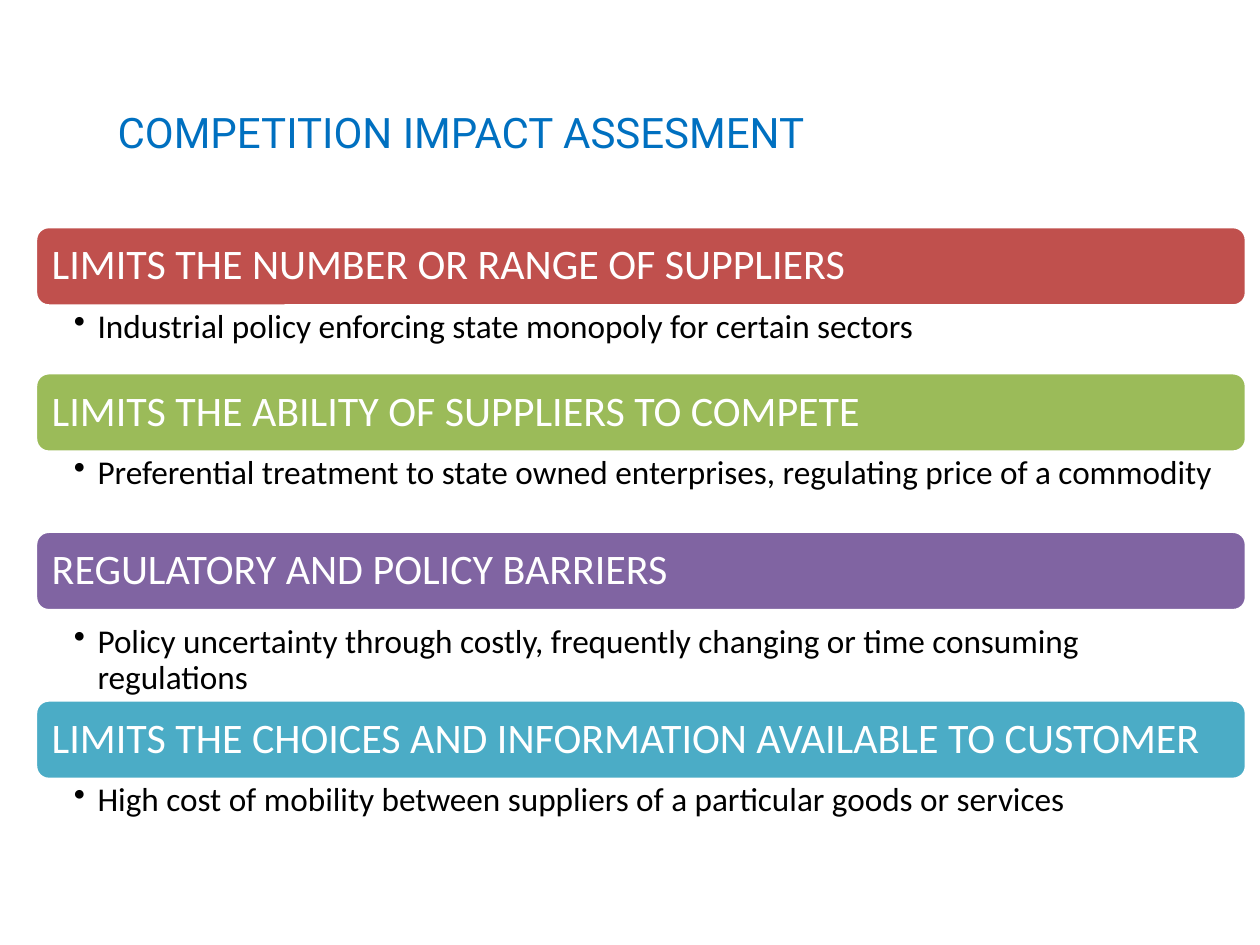
import pptx
import pptx.dml.color
import pptx.enum.shapes
import pptx.enum.text
import pptx.oxml.ns
import pptx.util
import lxml.etree

Pt = pptx.util.Pt
RGBColor = pptx.dml.color.RGBColor
ANCHOR = pptx.enum.text.MSO_ANCHOR
LEFT = pptx.enum.text.PP_ALIGN.LEFT

BLUE = RGBColor(0x00, 0x70, 0xC0)
RED = RGBColor(0xC0, 0x50, 0x4D)
GREEN = RGBColor(0x9B, 0xBB, 0x59)
PURPLE = RGBColor(0x80, 0x64, 0xA2)
TEAL = RGBColor(0x4B, 0xAC, 0xC6)
WHITE = RGBColor(0xFF, 0xFF, 0xFF)
BLACK = RGBColor(0x00, 0x00, 0x00)

BAR_LEFT, BAR_WIDTH, BAR_HEIGHT = 20.3, 692, 45.4

# Heading, colour, example, bar top, gap above the example, example height
BARRIERS = [
    ("LIMITS THE NUMBER OR RANGE OF SUPPLIERS", RED,
     "Industrial policy enforcing state monopoly for certain sectors",
     129.5, 0, 31),
    ("LIMITS THE ABILITY OF SUPPLIERS TO COMPETE", GREEN,
     "Preferential treatment to state owned enterprises, regulating price of a commodity",
     213, 0, 31),
    ("REGULATORY AND POLICY BARRIERS", PURPLE,
     "Policy uncertainty through costly, frequently changing or time consuming regulations",
     303.6, 6, 47),
    ("LIMITS THE CHOICES AND INFORMATION AVAILABLE TO CUSTOMER", TEAL,
     "High cost of mobility between suppliers of a particular goods or services",
     400, 0, 31),
]


class SlideBuilder:
    """Holds the text style and the current slide."""

    body_font, title_font = "Calibri", "Roboto"
    heading_size, example_size = 24, 19

    def __init__(self, slide):
        self.slide = slide

    def set_text(self, shape, text, font, size, color, anchor, insets):
        frame = shape.text_frame
        frame.word_wrap = True
        frame.auto_size = pptx.enum.text.MSO_AUTO_SIZE.NONE
        frame.vertical_anchor = anchor
        (frame.margin_left, frame.margin_top,
         frame.margin_right, frame.margin_bottom) = map(Pt, insets)
        paragraph = frame.paragraphs[0]
        paragraph.alignment = LEFT
        run = paragraph.add_run()
        run.text = text
        run.font.name = font
        run.font.size = Pt(size)
        run.font.color.rgb = color
        return paragraph

    def title(self, text):
        title = self.slide.shapes.title
        title.left, title.top, title.width, title.height = map(Pt, (60, 57, 612, 36))
        self.set_text(title, text, self.title_font, self.heading_size, BLUE,
                      ANCHOR.TOP, (7.2, 3.6, 7.2, 3.6))

    def bar(self, text, color, top):
        bar = self.slide.shapes.add_shape(
            pptx.enum.shapes.MSO_SHAPE.ROUNDED_RECTANGLE,
            Pt(BAR_LEFT), Pt(top), Pt(BAR_WIDTH), Pt(BAR_HEIGHT))
        bar.shadow.inherit = False
        bar.fill.solid()
        bar.fill.fore_color.rgb = color
        bar.line.color.rgb = WHITE
        bar.line.width = Pt(2)
        heading = self.set_text(bar, text, self.body_font, self.heading_size, WHITE,
                                ANCHOR.MIDDLE, (7.2, 7.2, 7.2, 7.2))
        heading.line_spacing = 0.9

    def example(self, text, top, height):
        box = self.slide.shapes.add_textbox(
            Pt(BAR_LEFT), Pt(top), Pt(BAR_WIDTH), Pt(height))
        example = self.set_text(box, text, self.body_font, self.example_size, BLACK,
                                ANCHOR.TOP, (22, 2, 13.5, 2))
        example.level = 1
        example.line_spacing = 0.9
        # Bullet with a hanging indent
        properties = example._p.get_or_add_pPr()
        properties.set("marL", str(Pt(13.5)))
        properties.set("indent", str(-Pt(13.5)))
        bullet = lxml.etree.SubElement(properties, pptx.oxml.ns.qn("a:buChar"))
        bullet.set("char", "•")


def main():
    deck = pptx.Presentation()
    deck.slide_width, deck.slide_height = Pt(720), Pt(540)
    builder = SlideBuilder(deck.slides.add_slide(deck.slide_layouts[5]))

    builder.title("COMPETITION IMPACT ASSESMENT")

    # Each barrier: a coloured bar with its example below
    for heading, color, example, top, gap, height in BARRIERS:
        builder.bar(heading, color, top)
        builder.example(example, top + BAR_HEIGHT + gap, height)

    deck.save("out.pptx")


if __name__ == "__main__":
    main()
